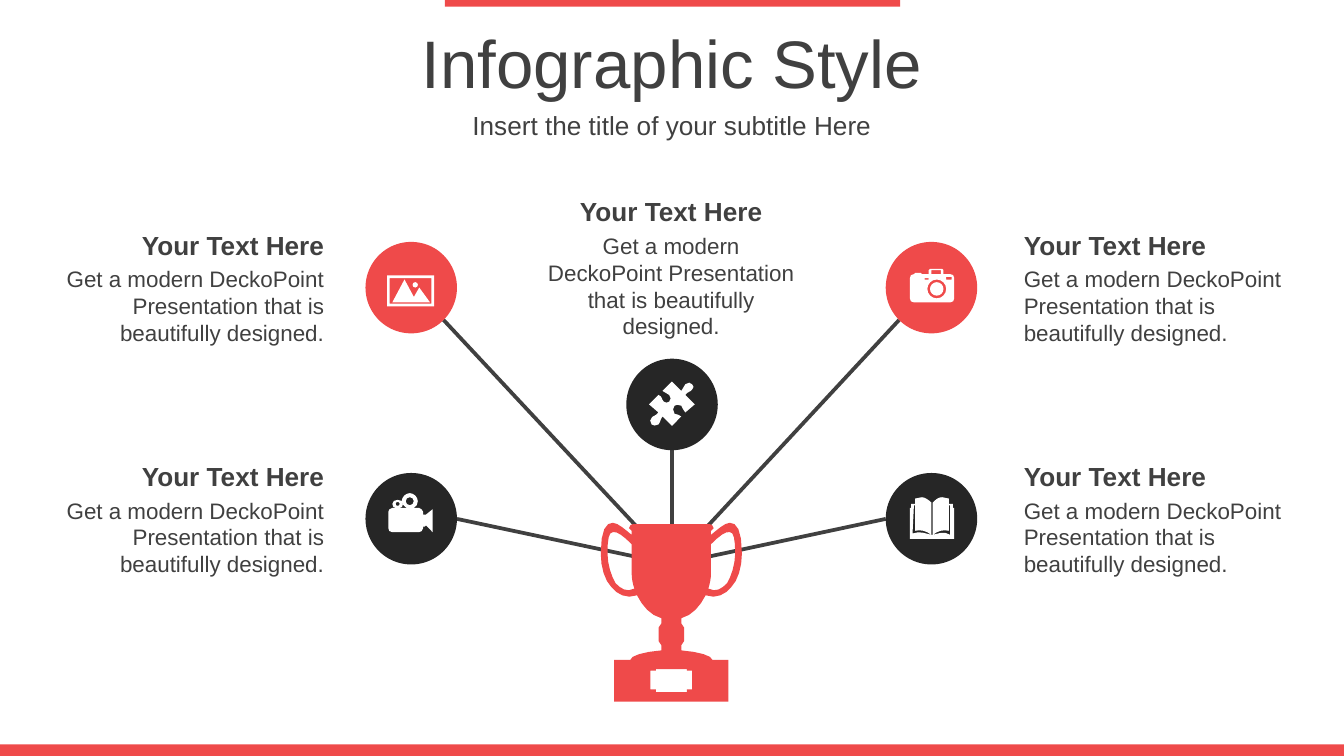
from math import cos, dist, pi, sin

from pptx import Presentation
from pptx.dml.color import RGBColor
from pptx.enum.shapes import MSO_CONNECTOR as Connector, MSO_SHAPE as Shape
from pptx.enum.text import MSO_ANCHOR as Anchor, PP_ALIGN as Align
from pptx.oxml.ns import qn
from pptx.util import Pt

COLORS = {"red": "EF4A4A", "dark": "262626", "text": "404040", "white": "FFFFFF"}
FONT = "Arial"
UNIT = 0.72  # points per unit of the icon grid
CIRCLE = 49

# Outlines: M move, L line, C curve, Z close, O circle (x y radius), R box (x y w h)
PHOTO = "O 37 32 2 M 29 28 L 36 41 L 40 34 L 48 45 L 20 45 Z R 18 27 31 19 R 16 25 35 23"
CAMERA = """O 38 35 5 O 38 35 7 R 29 27 3 1 R 45 26 4 2 R 34 21 7 3
M 33 20 L 42 20 L 43 21 L 43 24 L 48 24 C 50 24 51 25 51 27
L 51 42 C 51 44 50 45 48 45 L 21 45 C 19 45 18 44 18 42 L 18 27
C 18 25 19 24 21 24 L 22 23 L 26 23 L 27 24 L 32 24 L 32 21 Z"""
VIDEO = """O 24 23 1.5 O 33 21 3
M 33 15 C 36 15 39 18 39 21 C 39 23 38 25 36 26 L 40 26 C 41 26 43 28 43 29
L 43 31 L 45 31 L 50 27 L 50 44 L 45 39 L 44 40 L 43 40 L 43 41
C 43 43 41 44 40 44 L 20 44 C 18 44 17 43 17 41 L 17 29 C 17 28 18 26 20 26
L 23 26 C 21 26 20 25 20 23 C 20 21 22 20 24 20 C 26 20 28 21 28 23
C 28 25 27 26 25 26 L 31 26 C 29 25 27 23 27 21 C 27 18 30 15 33 15 Z"""
BOOK = """M 34 46 L 35 46 C 40 45 43 43 48 46 L 48 24 L 47 24 L 47 43
C 43 42 39 43 35 46 L 35 22 C 37 20 39 18 42 18 C 44 18 45 19 47 19 L 47 23
L 50 23 L 50 26 L 51 26 L 51 49 L 18 49 L 18 26 L 19 26 L 19 23 L 22 23 L 22 19
C 24 19 25 18 27 18 C 29 18 32 20 34 22 L 34 46 C 30 43 26 42 22 43 L 22 24
L 21 24 L 20 45 C 26 43 29 45 34 46 Z"""
PUZZLE = """M 49 19 C 50 20 51 22 49 23 C 48 25 46 24 44 27 L 51 34 L 44 40
C 42 39 43 37 41 35 C 39 34 37 34 36 35 C 35 36 34 39 36 41 C 38 42 39 41 41 43
L 34 50 L 27 43 C 25 46 26 46 24 49 C 22 50 20 50 19 49 C 18 47 17 45 19 44
C 20 42 22 43 24 40 L 17 34 L 24 27 C 27 28 26 30 28 32 C 29 33 31 33 32 32
C 33 31 34 28 32 27 C 30 25 29 26 27 24 L 34 17 L 41 24 C 43 22 42 21 44 19
C 46 17 48 18 49 19 Z"""
# Right half of the cup; the left half is its mirror image
TROPHY_HALF = """M 0 1 L 28.5 1 C 29.5 1 31.5 2 31.5 4 L 29.5 6 L 29.5 9
C 33.5 6 39.5 0 43.5 0 C 48.5 0 52.5 5 52.5 23 C 52.5 33 49.5 43 44.5 48
C 40.5 53 33.5 57 25.5 54 C 21.5 62 15.5 69 7.5 71 L 7.5 75 L 9.5 78
L 9.5 88 L 7.5 91 L 7.5 95 C 20.5 96 30.5 99 30.5 102 L 42.5 102
L 42.5 133 L 0 133
M 0 109 L 11.5 109 L 11.5 110 L 15.5 110 L 15.5 124 L 11.5 124 L 11.5 126 L 0 126
M 43.5 7 C 40.5 6 35.5 10 29.5 16 L 29.5 38 C 29.5 42 28.5 46 27.5 49
C 33.5 52 37.5 49 41.5 45 C 44.5 40 47.5 31 47.5 23 C 47.5 12 46.5 7 43.5 7 Z"""


def curve(points):
    """Points along a cubic curve, without its start; long curves get more."""
    steps = 4 if dist(points[0], points[3]) > 6 else 2
    for step in range(1, steps + 1):
        t = step / steps
        weights = ((1 - t) ** 3, 3 * t * (1 - t) ** 2, 3 * t * t * (1 - t), t ** 3)
        yield tuple(sum(w * p[axis] for w, p in zip(weights, points)) for axis in (0, 1))


def contours(outline):
    """Turn an outline into lists of corner points."""
    tokens = iter(outline.split())
    result = []

    def numbers(count):
        return [float(next(tokens)) for _ in range(count)]

    for command in tokens:
        if command == "M":
            result.append([tuple(numbers(2))])
        elif command == "L":
            result[-1].append(tuple(numbers(2)))
        elif command == "C":
            x1, y1, x2, y2, x3, y3 = numbers(6)
            result[-1].extend(curve([result[-1][-1], (x1, y1), (x2, y2), (x3, y3)]))
        elif command == "O":
            x, y, radius = numbers(3)
            count = 16 if radius > 4 else 8
            angles = [2 * pi * step / count for step in range(count)]
            result.append([(x + radius * cos(a), y + radius * sin(a)) for a in angles])
        elif command == "R":
            x, y, width, height = numbers(4)
            result.append([(x, y), (x + width, y), (x + width, y + height), (x, y + height)])
    return result


def mirrored(halves):
    """Join contours that start on the axis to their mirror image, double the others."""
    result = []
    for half in halves:
        other = [(-x, y) for x, y in reversed(half)]
        result += [half + other] if half[0][0] == 0 else [half, other]
    return result


class SlideBuilder:
    def __init__(self, slide):
        self.slide = slide

    def color(self, name):
        return RGBColor.from_string(COLORS[name])

    def paint(self, shape, color):
        shape.shadow.inherit = False
        shape.fill.solid()
        shape.fill.fore_color.rgb = self.color(color)
        shape.line.fill.background()

    def shape(self, kind, left, top, width, height, color):
        shape = self.slide.shapes.add_shape(kind, Pt(left), Pt(top), Pt(width), Pt(height))
        self.paint(shape, color)

    def line(self, start, end):
        connector = self.slide.shapes.add_connector(
            Connector.STRAIGHT, *(Pt(value) for value in start + end))
        connector.line.color.rgb = self.color("text")
        connector.line.width = Pt(2)
        properties = connector._element.spPr
        properties.append(properties.makeelement(qn("a:effectLst"), {}))

    def outline(self, left, top, shapes, color):
        placed = [[(Pt(left + x * UNIT), Pt(top + y * UNIT)) for x, y in points]
                  for points in shapes]
        builder = self.slide.shapes.build_freeform(*placed[0][0])
        for index, points in enumerate(placed):
            if index:
                builder.move_to(*points[0])
            builder.add_line_segments(points[1:], close=True)
        self.paint(builder.convert_to_shape(), color)

    def text(self, text, left, top, width, height, size, align, bold=False, before=0):
        box = self.slide.shapes.add_textbox(Pt(left), Pt(top), Pt(width), Pt(height))
        frame = box.text_frame
        frame.word_wrap = True
        frame.vertical_anchor = Anchor.MIDDLE
        frame.text = text
        paragraph = frame.paragraphs[0]
        paragraph.alignment = align
        paragraph.space_before = Pt(before)
        font = paragraph.runs[0].font
        font.name, font.size, font.bold = FONT, Pt(size), bold
        font.color.rgb = self.color("text")

    def caption(self, left, top, width, body_height, align):
        self.text("Your Text Here", left, top, width, 24.5, 14, align, bold=True)
        self.text("Get a modern DeckoPoint Presentation that is beautifully designed.",
                  left, top + 19.5, width, body_height, 12, align)


def main():
    presentation = Presentation()
    presentation.slide_width, presentation.slide_height = Pt(720), Pt(405)
    builder = SlideBuilder(presentation.slides.add_slide(presentation.slide_layouts[6]))

    # Bars at the top and bottom edges
    builder.shape(Shape.RECTANGLE, 238.3, 0, 244, 3.6, "red")
    builder.shape(Shape.RECTANGLE, 0, 398.8, 720, 6.2, "red")

    # Title and subtitle
    builder.text("Infographic Style", 0, 10, 720, 45.5, 36, Align.CENTER, before=3.6)
    builder.text("Insert the title of your subtitle Here", 0, 55.5, 720, 22.5, 14,
                 Align.CENTER, before=2.8)

    # Spokes, then the trophy over their meeting point
    for start in [(237.6, 171.4), (244.8, 278), (360, 241.2), (481.7, 171.4), (474.5, 278)]:
        builder.line(start, (360, 302.4))
    builder.outline(359.64, 280.1, mirrored(contours(TROPHY_HALF)), "red")

    # Circles with icons
    left, middle, right = 195.8, 335.5, 474.5
    upper, lower = 129.6, 253.4
    for x, y, color, icon in [(left, upper, "red", PHOTO), (left, lower, "dark", VIDEO),
                              (middle, 192.2, "dark", PUZZLE),
                              (right, upper, "red", CAMERA), (right, lower, "dark", BOOK)]:
        builder.shape(Shape.OVAL, x, y, CIRCLE, CIRCLE, color)
        builder.outline(x, y, contours(icon), "white")

    # Captions
    builder.caption(285.1, 100.8, 149, 65.5, Align.CENTER)
    for y in (upper, lower):
        builder.caption(20.2, y - 10.8, 160.6, 51.1, Align.RIGHT)
        builder.caption(541.4, y - 10.8, 160.6, 51.1, Align.LEFT)

    presentation.save("out.pptx")


if __name__ == "__main__":
    main()
